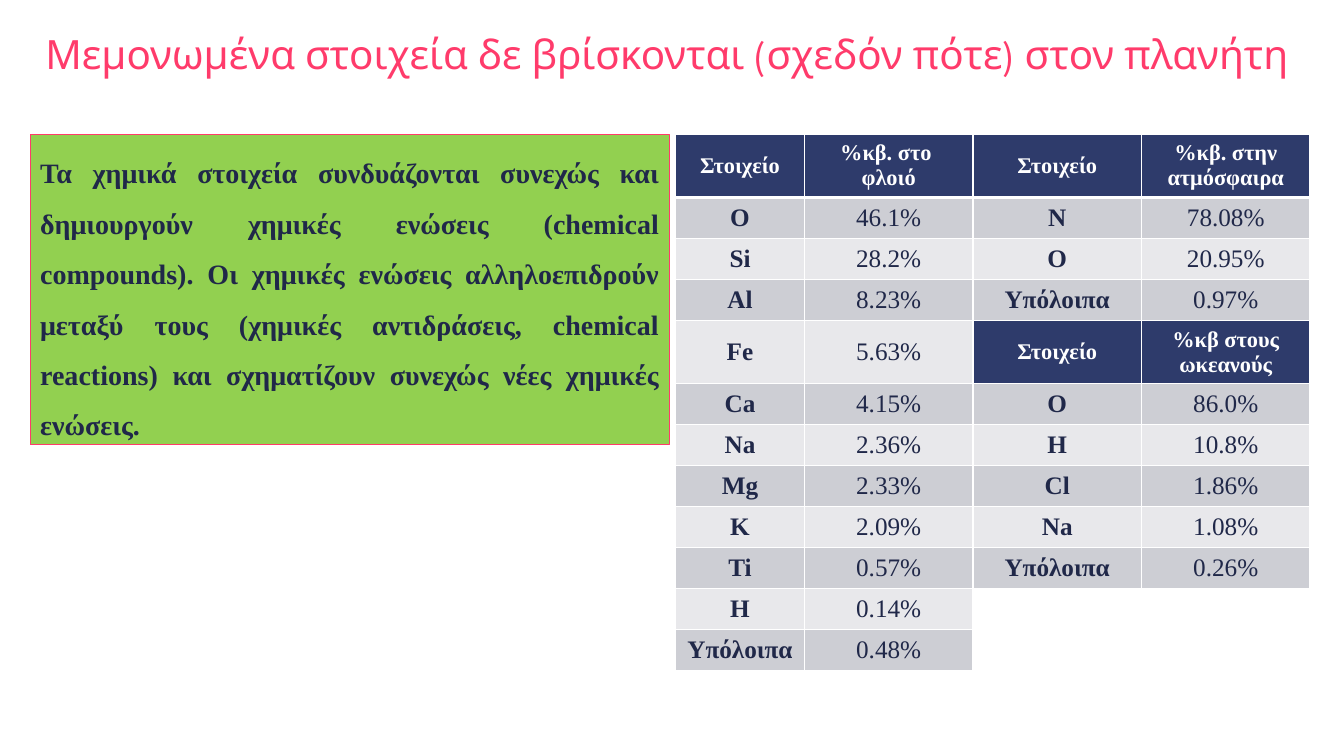
from lxml import etree
from pptx import Presentation
from pptx.dml.color import RGBColor
from pptx.enum.shapes import MSO_SHAPE
from pptx.enum.text import MSO_ANCHOR, MSO_AUTO_SIZE, PP_ALIGN
from pptx.oxml.ns import qn
from pptx.util import Pt

RECTANGLE = MSO_SHAPE.RECTANGLE
TOP, MIDDLE = MSO_ANCHOR.TOP, MSO_ANCHOR.MIDDLE
LEFT, CENTER, JUSTIFY = PP_ALIGN.LEFT, PP_ALIGN.CENTER, PP_ALIGN.JUSTIFY
NO_AUTOFIT = MSO_AUTO_SIZE.NONE

COLORS = {
    "pink": "FF3B6B",
    "green": "92D050",
    "ink": "202849",
    "navy": "2E3B6B",
    "dark band": "CDCED4",
    "light band": "E8E8EB",
    "white": "FFFFFF",
}
TITLE_FONT, TEXT_FONT = "League Spartan", "Times New Roman"


def style_text(para, font_name, size, color, bold, alignment):
    para.alignment = alignment
    for span in para.runs:
        span.font.name = font_name
        span.font.size = Pt(size)
        span.font.bold = bold
        span.font.color.rgb = RGBColor.from_string(COLORS[color])


def add_borders(cell, widths):
    """Put white borders first in the cell properties, as the schema requires."""
    properties = cell._tc.get_or_add_tcPr()
    for position, (side, width) in enumerate(widths.items()):
        line = etree.Element(qn("a:" + side), w=str(Pt(width)))
        fill = etree.SubElement(line, qn("a:solidFill"))
        etree.SubElement(fill, qn("a:srgbClr"), val=COLORS["white"])
        properties.insert(position, line)


deck = Presentation()
deck.slide_width, deck.slide_height = Pt(960), Pt(540)
page = deck.slides.add_slide(deck.slide_layouts[5])

# Title
title = page.shapes.title
title.left, title.top, title.width, title.height = Pt(25.2), Pt(13.7), Pt(910.8), Pt(52.6)
title.text_frame.text = "Μεμονωμένα στοιχεία δε βρίσκονται (σχεδόν πότε) στον πλανήτη"
title.text_frame.auto_size = NO_AUTOFIT
title.text_frame.vertical_anchor = MIDDLE
title_para = title.text_frame.paragraphs[0]
title_para.line_spacing = 0.9
style_text(title_para, TITLE_FONT, 28.8, "pink", False, LEFT)

# Explanation
box = page.shapes.add_shape(RECTANGLE, Pt(21.6), Pt(95.8), Pt(456.5), Pt(221.8))
box.shadow.inherit = False
box.fill.solid()
box.fill.fore_color.rgb = RGBColor.from_string(COLORS["green"])
box.line.color.rgb = RGBColor.from_string(COLORS["pink"])
box.line.width = Pt(0.75)
box.text_frame.word_wrap = True
box.text_frame.vertical_anchor = TOP
box.text_frame.text = (
    "Τα χημικά στοιχεία συνδυάζονται συνεχώς και δημιουργούν χημικές ενώσεις "
    "(chemical compounds). Οι χημικές ενώσεις αλληλοεπιδρούν μεταξύ τους "
    "(χημικές αντιδράσεις, chemical reactions) και σχηματίζουν συνεχώς νέες "
    "χημικές ενώσεις."
)
box_para = box.text_frame.paragraphs[0]
box_para.line_spacing = 1.5
style_text(box_para, TEXT_FONT, 20, "ink", True, JUSTIFY)

# Composition of crust, atmosphere and oceans
ROWS = [
    ("Στοιχείο", "%κβ. στο \vφλοιό", "Στοιχείο", "%κβ. στην ατμόσφαιρα"),
    ("O", "46.1%", "Ν", "78.08%"),
    ("Si", "28.2%", "Ο", "20.95%"),
    ("Al", "8.23%", "Υπόλοιπα", "0.97%"),
    ("Fe", "5.63%", "Στοιχείο", "%κβ στους ωκεανούς"),
    ("Ca", "4.15%", "Ο", "86.0%"),
    ("Na", "2.36%", "Η", "10.8%"),
    ("Mg", "2.33%", "Cl", "1.86%"),
    ("K", "2.09%", "Na", "1.08%"),
    ("Ti", "0.57%", "Υπόλοιπα", "0.26%"),
    ("H", "0.14%", "", ""),
    ("Υπόλοιπα", "0.48%", "", ""),
]
OCEAN_HEADER_ROW, EMPTY_ROW = 4, 10

frame = page.shapes.add_table(len(ROWS), 4, Pt(482.6), Pt(95.8), Pt(453.2), Pt(383))
table = frame.table
for column, width in zip(table.columns, (92, 120.4, 120.4, 120.4)):
    column.width = Pt(width)

for row_index, texts in enumerate(ROWS):
    two_lines = row_index in (0, OCEAN_HEADER_ROW)
    table.rows[row_index].height = Pt(45.3 if two_lines else 29.25)
    for column_index, text in enumerate(texts):
        cell = table.cell(row_index, column_index)
        cell.vertical_anchor = MIDDLE
        header = row_index == 0 or (row_index == OCEAN_HEADER_ROW and column_index >= 2)
        if text:
            band = "dark band" if row_index % 2 else "light band"
            cell.fill.solid()
            cell.fill.fore_color.rgb = RGBColor.from_string(COLORS["navy" if header else band])
        else:
            cell.fill.background()
        cell.text_frame.text = text
        style_text(
            cell.text_frame.paragraphs[0],
            TEXT_FONT,
            16 if header else 18,
            "white" if header else "ink",
            header or column_index % 2 == 0,
            CENTER,
        )
        add_borders(cell, {
            "lnL": 1,
            "lnR": 1,
            "lnT": 3 if row_index == 1 else 1,
            "lnB": 3 if row_index == 0 else 1,
        })

table.cell(EMPTY_ROW, 2).merge(table.cell(EMPTY_ROW + 1, 3))

deck.save("out.pptx")
